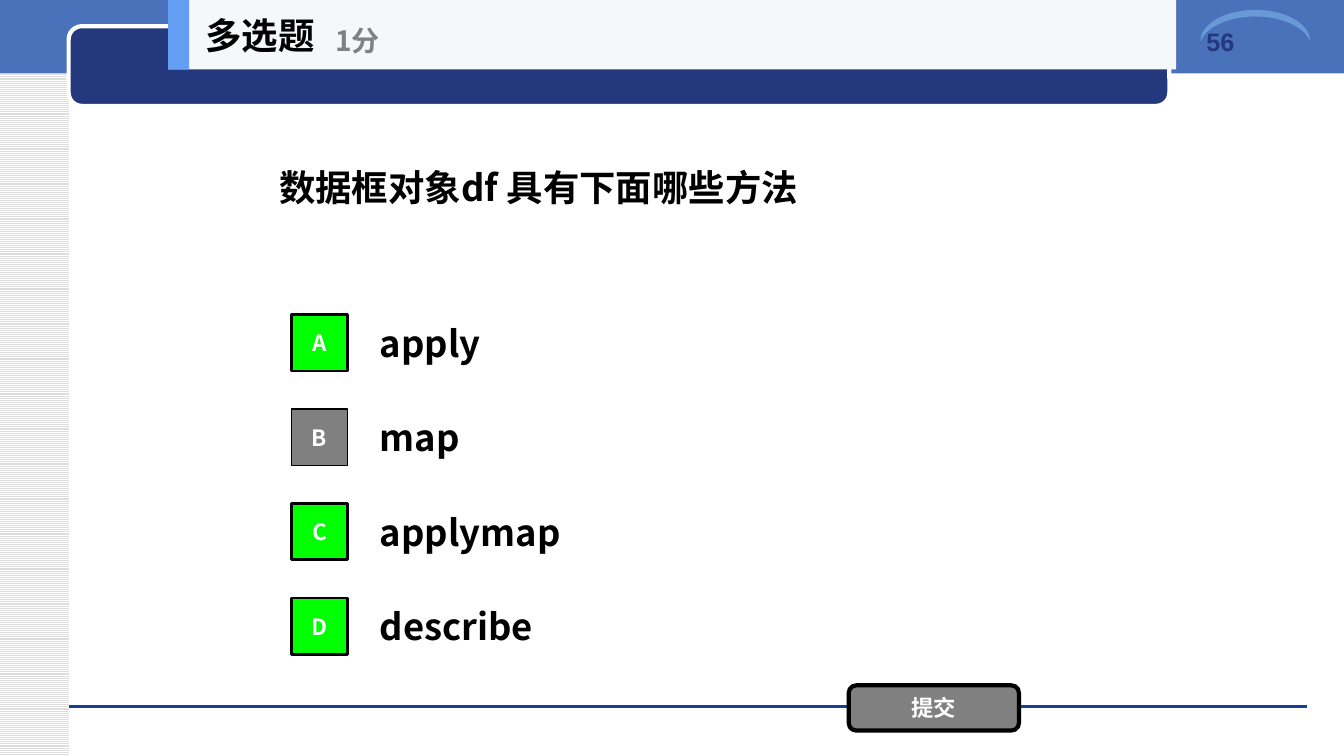
from lxml.etree import SubElement
from pptx import Presentation
from pptx.dml.color import RGBColor
from pptx.enum.dml import MSO_PATTERN
from pptx.enum.shapes import MSO_CONNECTOR, MSO_SHAPE as Kind
from pptx.enum.text import MSO_ANCHOR as Anchor, MSO_AUTO_SIZE, PP_ALIGN as Align
from pptx.oxml.ns import qn
from pptx.util import Cm, Pt

SANS = "Noto Sans CJK SC"
WIDTH, HEIGHT = 33.87, 19.05
BLACK, WHITE, GRAY, GREEN = "000000", "FFFFFF", "808080", "00FF00"
NAVY = "23387D"
OPTIONS = [("A", "apply", True), ("B", "map", False),
           ("C", "applymap", True), ("D", "describe", True)]


def color(code):
    return RGBColor.from_string(code)


def place(item, box):
    for key, value in zip(("left", "top", "width", "height"), box):
        setattr(item, key, Cm(value))


def write(item, text, size, code, font=SANS, align=Align.LEFT, anchor=Anchor.MIDDLE):
    frame = item.text_frame
    form = {"word_wrap": True, "auto_size": MSO_AUTO_SIZE.NONE,
            "vertical_anchor": anchor}
    for key, value in form.items():
        setattr(frame, key, value)
    para = frame.paragraphs[0]
    para.alignment = align
    run = para.add_run()
    run.text = text
    for key, value in {"size": Pt(size), "bold": True, "name": font}.items():
        setattr(run.font, key, value)
    run.font.color.rgb = color(code)
    SubElement(run.font._element, qn("a:ea"), typeface=font)


def label(slide, box, *args, **form):
    item = slide.shapes.add_textbox(*map(Cm, box))
    write(item, *args, **form)


def block(slide, box, fill, kind=Kind.RECTANGLE, edge=None, weight=1):
    """Add a filled shape; without an edge colour it has no outline."""
    item = slide.shapes.add_shape(kind, *map(Cm, box))
    item.shadow.inherit = False
    item.fill.solid()
    item.fill.fore_color.rgb = color(fill)
    if edge:
        item.line.color.rgb = color(edge)
        item.line.width = Pt(weight)
    else:
        item.line.fill.background()
    return item


def button(slide, box, text, fill, weight, kind=Kind.RECTANGLE):
    item = block(slide, box, fill, kind, BLACK, weight)
    for side in ("left", "right", "top", "bottom"):
        setattr(item.text_frame, f"margin_{side}", 0)
    write(item, text, 16, WHITE, align=Align.CENTER)


def frame(slide, box):
    """Draw the striped margin, top band, tab, page number and foot rule."""
    x, y, w, h = box
    edge = x + 1.73
    stripe = block(slide, (x, y, 1.73, h), WHITE)
    stripe.fill.patterned()
    stripe.fill.pattern = MSO_PATTERN.LIGHT_HORIZONTAL
    stripe.fill.fore_color.rgb = color("DDDDDD")
    stripe.fill.back_color.rgb = color(WHITE)
    block(slide, (x, y - 0.08, w, 1.93), "4972BB")
    level = Cm(y + 17.81)
    rule = slide.shapes.add_connector(MSO_CONNECTOR.STRAIGHT, Cm(edge), level,
                                      Cm(x + w - 0.93), level)
    rule.line.color.rgb = color("1A3D97")
    rule.line.width = Pt(0)
    SubElement(rule._element.spPr, qn("a:effectLst"))
    block(slide, (edge, y + 0.66, 27.74, 2.01), NAVY,
          Kind.ROUNDED_RECTANGLE, WHITE, 3)
    moon = block(slide, (x + 31.24, y - 0.74, 0.79, 2.77), "6A99D8", Kind.MOON)
    moon.rotation = 90
    moon.adjustments[0] = 0.21
    label(slide, (x + 30.15, y + 0.53, 3.07, 1.8), "56", 18, NAVY,
          font="Arial", anchor=Anchor.TOP)


def ask(slide, box):
    title = slide.shapes.title
    place(title, box)
    write(title, "数据框对象df 具有下面哪些方法", 26, BLACK)


def choices(slide, box):
    x, y, w, h = box
    step = h / len(OPTIONS)
    for row, (mark, text, right) in enumerate(OPTIONS):
        top = y + row * step
        label(slide, (x + 1.98, top, w - 1.98, 1.78), text, 26, BLACK)
        button(slide, (x, top + 0.18, 1.42, 1.42), mark,
               GREEN if right else GRAY, 2 if right else 1)


def header(slide, box):
    x, y, w, h = box
    block(slide, box, "F6F7F8")
    block(slide, (x, y, 0.53, h), "639EF4")
    label(slide, (x + 0.69, y, 5.28, h), "多选题", 26, BLACK)
    label(slide, (x + 3.96, y + 0.3, 6.35, 1.42), "1分", 20, GRAY)


def main():
    deck = Presentation()
    deck.slide_width, deck.slide_height = Cm(WIDTH), Cm(HEIGHT)
    slide = deck.slides.add_slide(deck.slide_layouts[5])
    frame(slide, (0, 0, WIDTH, HEIGHT))
    ask(slide, (6.78, 1.75, 20.32, 5.94))
    choices(slide, (7.34, 7.75, 19.76, 9.52))
    button(slide, (21.39, 17.27, 4.29, 1.14), "提交", GRAY, 3,
           Kind.ROUNDED_RECTANGLE)
    header(slide, (4.24, 0, 25.4, 1.75))
    deck.save("out.pptx")


if __name__ == "__main__":
    main()
